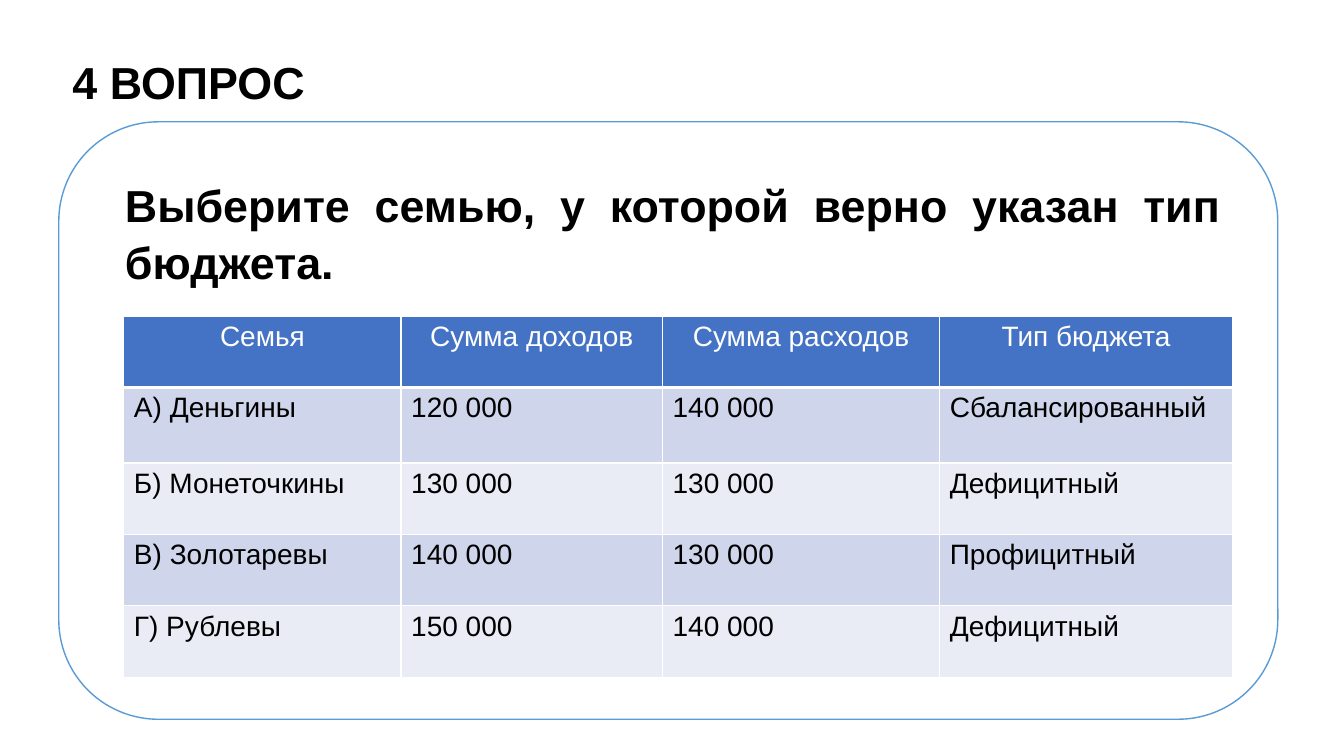
from dataclasses import dataclass

from lxml.etree import SubElement
from pptx import Presentation
from pptx.dml.color import RGBColor
from pptx.enum.shapes import MSO_SHAPE
from pptx.enum.text import MSO_ANCHOR, MSO_AUTO_SIZE, PP_ALIGN
from pptx.oxml.ns import qn
from pptx.util import Emu, Pt

EMU_PER_PX = 9525
FONT = "Arial"
BLACK, WHITE, FRAME_BLUE, HEADER_BLUE = "000000", "FFFFFF", "5B9BD5", "4472C4"
BAND_FILLS = ("CFD5EA", "E9EBF5")

COLUMN_WIDTHS = (264, 249, 264, 279)
ROW_HEIGHTS = (68, 72, 68, 68, 68)
HEADERS = ("Семья", "Сумма доходов", "Сумма расходов", "Тип бюджета")


@dataclass(frozen=True)
class Box:
    left: int
    top: int
    width: int
    height: int

    def emu(self) -> tuple:
        return tuple(px(n) for n in (self.left, self.top, self.width, self.height))


@dataclass(frozen=True)
class Heading:
    """Wording, place and format of a placeholder."""
    text: str
    box: Box
    frame: dict
    para: dict
    indent: int = 0


@dataclass(frozen=True)
class Family:
    name: str
    income: str
    expenses: str
    budget: str

    def cells(self) -> tuple:
        return self.name, self.income, self.expenses, self.budget


def px(count: int) -> Emu:
    return Emu(count * EMU_PER_PX)


def rgb(value: str) -> RGBColor:
    return RGBColor.from_string(value)


def apply(target, values: dict) -> None:
    for name, value in values.items():
        setattr(target, name, value)


def write(para, text: str, size: int, color: str, bold: bool) -> None:
    span = para.add_run()
    span.text = text
    apply(span.font, {"name": FONT, "size": Pt(size), "bold": bold})
    span.font.color.rgb = rgb(color)


def fill_heading(shape, heading: Heading) -> None:
    apply(shape, dict(zip(("left", "top", "width", "height"), heading.box.emu())))
    frame = shape.text_frame
    apply(frame, {"word_wrap": True, "auto_size": MSO_AUTO_SIZE.SHAPE_TO_FIT_TEXT,
                  **heading.frame})
    para = frame.paragraphs[0]
    apply(para, {"space_before": Pt(0), **heading.para})
    properties = para._p.get_or_add_pPr()
    properties.set("marL", str(px(heading.indent)))
    properties.set("indent", "0")
    SubElement(properties, qn("a:buNone"))
    write(para, heading.text, 32, BLACK, True)


def add_frame(page, box: Box) -> None:
    """Draw the rounded frame behind everything else."""
    frame = page.shapes.add_shape(MSO_SHAPE.ROUNDED_RECTANGLE, *box.emu())
    frame.shadow.inherit = False
    frame.fill.solid()
    frame.fill.fore_color.rgb = rgb(WHITE)
    frame.line.color.rgb = rgb(FRAME_BLUE)
    frame.line.width = Pt(1)
    page.shapes._spTree.insert(2, frame._element)


def add_borders(cell, top: int, bottom: int) -> None:
    properties = cell._tc.get_or_add_tcPr()
    for side, width in {"L": 1, "R": 1, "T": top, "B": bottom}.items():
        line = SubElement(properties, qn(f"a:ln{side}"), w=str(Pt(width)))
        SubElement(SubElement(line, qn("a:solidFill")), qn("a:srgbClr"), val=WHITE)


def add_budget_table(page, left: int, top: int, families: tuple) -> None:
    rows = (HEADERS, *(family.cells() for family in families))
    box = Box(left, top, sum(COLUMN_WIDTHS), sum(ROW_HEIGHTS))
    table = page.shapes.add_table(len(rows), len(HEADERS), *box.emu()).table
    for column, width in zip(table.columns, COLUMN_WIDTHS):
        column.width = px(width)
    for row, height in zip(table.rows, ROW_HEIGHTS):
        row.height = px(height)
    for r, texts in enumerate(rows):
        is_header = r == 0
        for c, text in enumerate(texts):
            cell = table.cell(r, c)
            add_borders(cell, 3 if r == 1 else 1, 3 if is_header else 1)
            cell.fill.solid()
            cell.fill.fore_color.rgb = rgb(HEADER_BLUE if is_header else BAND_FILLS[(r - 1) % 2])
            para = cell.text_frame.paragraphs[0]
            para.alignment = PP_ALIGN.CENTER if is_header else PP_ALIGN.LEFT
            write(para, text, 20, WHITE if is_header else BLACK, False)


TITLE = Heading(
    "4 ВОПРОС", Box(69, 44, 972, 69),
    {"margin_left": 0, "margin_top": 0, "margin_right": px(10), "margin_bottom": px(10),
     "vertical_anchor": MSO_ANCHOR.TOP},
    {"alignment": PP_ALIGN.LEFT, "line_spacing": 1.15},
)
QUESTION = Heading(
    "Выберите семью, у которой верно указан тип бюджета.", Box(97, 157, 1076, 123),
    {"margin_left": px(10), "margin_top": px(10), "margin_right": px(10),
     "margin_bottom": px(10), "vertical_anchor": MSO_ANCHOR.TOP},
    {"alignment": PP_ALIGN.JUSTIFY, "line_spacing": 1.05},
    indent=12,
)
FAMILIES = (
    Family("А) Деньгины", "120 000", "140 000", "Сбалансированный"),
    Family("Б) Монеточкины", "130 000", "130 000", "Дефицитный"),
    Family("В) Золотаревы", "140 000", "130 000", "Профицитный"),
    Family("Г) Рублевы", "150 000", "140 000", "Дефицитный"),
)


def main() -> None:
    deck = Presentation()
    apply(deck, {"slide_width": px(1280), "slide_height": px(720)})
    page = deck.slides.add_slide(deck.slide_layouts[1])
    add_frame(page, Box(56, 116, 1161, 569))
    fill_heading(page.shapes.title, TITLE)
    fill_heading(page.placeholders[1], QUESTION)
    add_budget_table(page, 118, 301, FAMILIES)
    deck.save("out.pptx")


if __name__ == "__main__":
    main()
